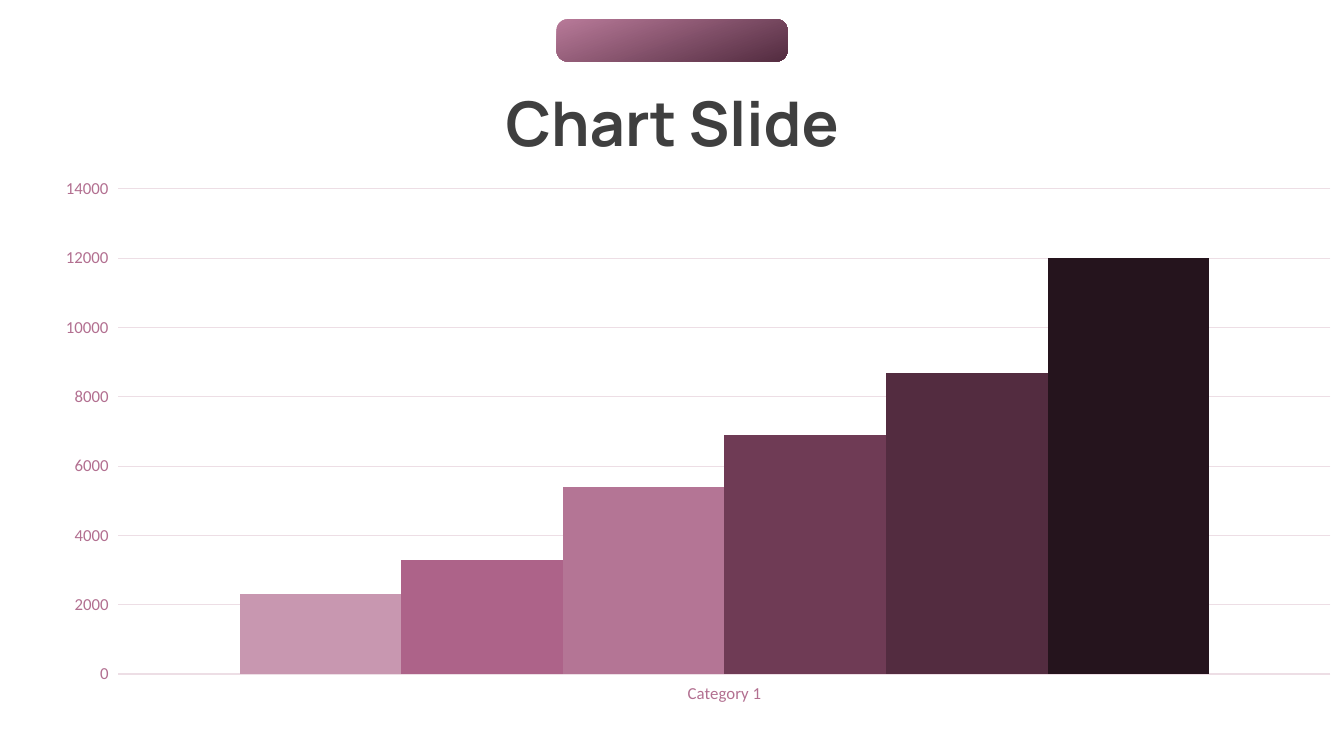
from lxml import etree
from pptx import Presentation
from pptx.chart.data import CategoryChartData
from pptx.dml.color import RGBColor
from pptx.enum.chart import XL_CHART_TYPE, XL_TICK_MARK
from pptx.enum.shapes import MSO_SHAPE
from pptx.enum.text import MSO_ANCHOR, MSO_AUTO_SIZE, PP_ALIGN
from pptx.oxml.ns import qn
from pptx.util import Inches, Pt

COLUMNS = XL_CHART_TYPE.COLUMN_CLUSTERED
TICK_OUTSIDE = XL_TICK_MARK.OUTSIDE
ROUNDED = MSO_SHAPE.ROUNDED_RECTANGLE
MIDDLE = MSO_ANCHOR.MIDDLE
NO_AUTOFIT = MSO_AUTO_SIZE.NONE
CENTER = PP_ALIGN.CENTER
TITLE_ONLY_LAYOUT = 5

# Column values with their colours, from left to right
COLUMN_SERIES = [
    (2300, "C897B0"),
    (3300, "AD6389"),
    (5400, "B47595"),
    (6900, "6F3B55"),
    (8700, "532C40"),
    (12000, "25141D"),
]


def color(value):
    return RGBColor.from_string(value)


def set_attributes(target, values):
    for name, value in values.items():
        setattr(target, name, value)


class SlideBuilder:
    """Holds the style and the current slide."""

    title_font = {"name": "Manrope", "size": Pt(44), "bold": True}
    chart_font = {"name": "Calibri", "size": Pt(12)}
    title_color = "3F3F3F"
    chart_color = "6F3B55"
    axis_color = "B26F90"
    grid_color = "EDDEE5"

    def __init__(self, presentation):
        layout = presentation.slide_layouts[TITLE_ONLY_LAYOUT]
        self.slide = presentation.slides.add_slide(layout)
        background = self.slide.background.fill
        background.solid()
        background.fore_color.rgb = color("FFFFFF")

    def apply_font(self, font, values, font_color):
        set_attributes(font, values)
        font.color.rgb = color(font_color)

    def title(self, text, left, top, width, height):
        shape = self.slide.shapes.title
        set_attributes(shape, {
            "left": Inches(left), "top": Inches(top),
            "width": Inches(width), "height": Inches(height),
        })
        frame = shape.text_frame
        frame.text = text
        set_attributes(frame, {"vertical_anchor": MIDDLE, "word_wrap": True,
                               "auto_size": NO_AUTOFIT})
        paragraph = frame.paragraphs[0]
        set_attributes(paragraph, {"alignment": CENTER, "line_spacing": 0.9})
        self.apply_font(paragraph.runs[0].font, self.title_font, self.title_color)

    def column_chart(self, category, series_values, left, top, width, height, plot_area):
        data = CategoryChartData()
        data.categories = [category]
        for number, (value, _) in enumerate(series_values, start=1):
            data.add_series(f"Series {number}", [value])
        chart = self.slide.shapes.add_chart(
            COLUMNS, Inches(left), Inches(top), Inches(width), Inches(height), data
        ).chart
        set_attributes(chart, {"has_legend": False, "has_title": False})
        self.apply_font(chart.font, self.chart_font, self.chart_color)

        # Columns
        plot = chart.plots[0]
        set_attributes(plot, {"gap_width": 150, "overlap": 0, "vary_by_categories": False})
        for series, (_, series_color) in zip(plot.series, series_values):
            series.format.fill.solid()
            series.format.fill.fore_color.rgb = color(series_color)

        # Axes and gridlines
        for axis in (chart.category_axis, chart.value_axis):
            axis.major_tick_mark = TICK_OUTSIDE
            axis.format.line.fill.background()
            self.apply_font(axis.tick_labels.font, self.chart_font, self.axis_color)
        set_attributes(chart.value_axis, {
            "minimum_scale": 0, "maximum_scale": 14000, "major_unit": 2000,
            "has_major_gridlines": True,
        })
        grid_line = chart.value_axis.major_gridlines.format.line
        grid_line.width = Pt(0.75)
        grid_line.color.rgb = color(self.grid_color)
        self.place_plot(chart, plot_area)

    def place_plot(self, chart, plot_area):
        """Fix the inner plot area as fractions of the chart: x, y, width, height."""
        plot_element = chart.element.find(".//" + qn("c:plotArea"))
        layout = plot_element.find(qn("c:layout"))
        if layout is None:
            layout = etree.Element(qn("c:layout"))
            plot_element.insert(0, layout)
        manual = etree.SubElement(layout, qn("c:manualLayout"))
        settings = [("layoutTarget", "inner"), ("xMode", "edge"), ("yMode", "edge")]
        settings += zip("xywh", plot_area)
        for name, value in settings:
            etree.SubElement(manual, qn(f"c:{name}")).set("val", str(value))

    def gradient_pill(self, left, top, width, height, colors, angle):
        shape = self.slide.shapes.add_shape(
            ROUNDED, Inches(left), Inches(top), Inches(width), Inches(height)
        )
        shape.adjustments[0] = 0.26
        shape.shadow.inherit = False
        shape.line.fill.background()
        shape.fill.gradient()
        shape.fill.gradient_angle = angle
        for stop, position, stop_color in zip(shape.fill.gradient_stops, (0, 1), colors):
            stop.position = position
            stop.color.rgb = color(stop_color)


def main():
    presentation = Presentation()
    set_attributes(presentation, {"slide_width": Inches(13.33), "slide_height": Inches(7.5)})
    builder = SlideBuilder(presentation)

    # Heading
    builder.title("Chart Slide", 2.92, 0.74, 7.5, 1.03)

    # Rising columns
    builder.column_chart("Category 1", COLUMN_SERIES, 0.13, 1.76, 13.07, 5.73,
                         plot_area=(0.08, 0.02, 0.92, 0.84))

    # Accent above the heading; angle runs counter-clockwise
    builder.gradient_pill(5.52, 0.19, 2.29, 0.42, ("B87A99", "532C40"), angle=290)

    presentation.save("out.pptx")


if __name__ == "__main__":
    main()
